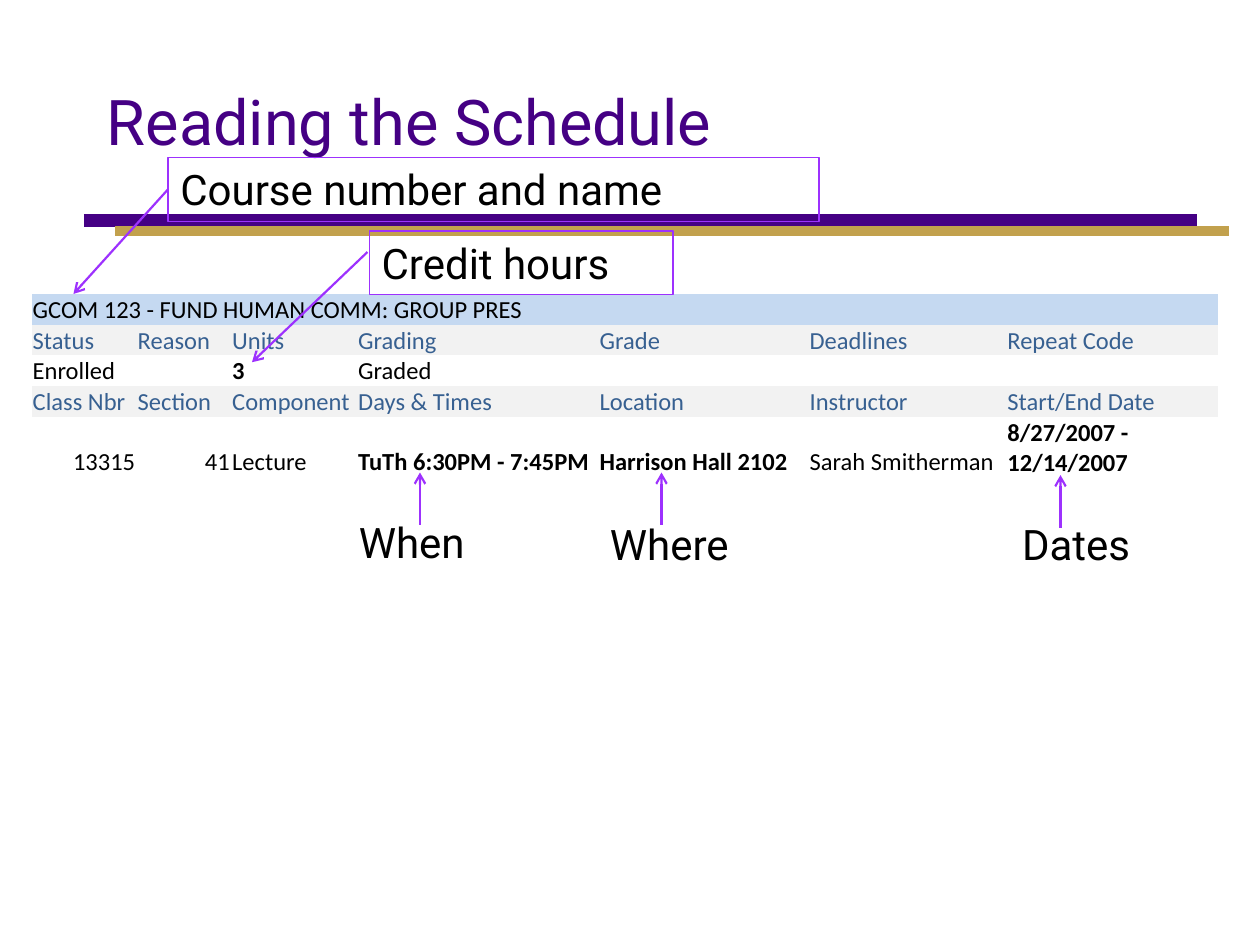
from lxml.etree import SubElement
from pptx import Presentation
from pptx.dml.color import RGBColor
from pptx.enum.shapes import MSO_CONNECTOR as Connector, MSO_SHAPE as Shape
from pptx.enum.text import MSO_ANCHOR as Anchor, MSO_AUTO_SIZE as AutoSize, PP_ALIGN as Align
from pptx.oxml.ns import qn
from pptx.util import Pt

PURPLE, GOLD, VIOLET, BLACK = "450084", "C2A14D", "9D31FE", "000000"
LABEL_BLUE, COURSE_FILL, LABEL_FILL = "376091", "C5D9F1", "F2F2F2"
NO_STYLE = "{2D5ABB26-0587-4C30-8999-92F81FD0307C}"

COLUMN_WIDTHS = [60, 54, 72, 138, 120, 113, 121]
ROW_HEIGHT = 10.8
SCHEDULE = [
    ["GCOM 123 - FUND HUMAN COMM: GROUP PRES"] + [""] * 6,
    ["Status", "Reason", "Units", "Grading", "Grade", "Deadlines", "Repeat Code"],
    ["Enrolled", "", "3", "Graded", "", "", ""],
    ["Class Nbr", "Section", "Component", "Days & Times", "Location", "Instructor", "Start/End Date"],
    ["13315", "41", "Lecture", "TuTh 6:30PM - 7:45PM", "Harrison Hall 2102",
     "Sarah Smitherman", "8/27/2007 - 12/14/2007"],
    [""] * 7,
]
ROW_FILLS = {0: COURSE_FILL, 1: LABEL_FILL, 3: LABEL_FILL}
LABEL_ROWS = {1, 3}
BOLD_CELLS = {(2, 2), (4, 3), (4, 4), (4, 6)}
RIGHT_CELLS = {(4, 0), (4, 1)}


def color(hex_string):
    """Turn a hex string into a colour."""
    return RGBColor.from_string(hex_string)


def apply_format(target, values):
    """Set each attribute of the target from a dict of values."""
    for name, value in values.items():
        setattr(target, name, value)


def write_text(frame, text, font_color, frame_format, font_format):
    """Write one formatted paragraph into a text frame."""
    apply_format(frame, {"word_wrap": True, **frame_format})
    paragraph = frame.paragraphs[0]
    paragraph.alignment = Align.LEFT
    run = paragraph.add_run()
    run.text = text
    apply_format(run.font, font_format)
    run.font.color.rgb = color(font_color)


def add_label(slide, text, left, top, width, height, font_color=BLACK, size=24, **frame_format):
    """Add a plain text box."""
    box = slide.shapes.add_textbox(Pt(left), Pt(top), Pt(width), Pt(height))
    write_text(box.text_frame, text, font_color, frame_format, {"name": "Roboto", "size": Pt(size)})


def add_callout(slide, text, left, top, width, height):
    """Add an outlined rectangle with text and return it."""
    shape = slide.shapes.add_shape(Shape.RECTANGLE, Pt(left), Pt(top), Pt(width), Pt(height))
    shape.shadow.inherit = False
    shape.fill.background()
    shape.line.color.rgb = color(VIOLET)
    shape.line.width = Pt(0.75)
    write_text(shape.text_frame, text, BLACK,
               {"vertical_anchor": Anchor.TOP, "auto_size": AutoSize.SHAPE_TO_FIT_TEXT},
               {"name": "Roboto", "size": Pt(24)})
    return shape


def add_line(slide, start, end, line_color, width):
    """Add a straight connector without a shadow and return it."""
    line = slide.shapes.add_connector(Connector.STRAIGHT, *map(Pt, start + end))
    line.line.color.rgb = color(line_color)
    line.line.width = Pt(width)
    SubElement(line.element.spPr, qn("a:effectLst"))
    return line


def add_arrow(slide, start, end):
    """Add a violet line with an open arrowhead at its end and return it."""
    arrow = add_line(slide, start, end, VIOLET, 1.25)
    SubElement(arrow.element.spPr.find(qn("a:ln")), qn("a:tailEnd"), type="arrow")
    return arrow


def format_cell(cell, text, row, column):
    """Fill one schedule cell and write its text."""
    inset = Pt(0.72)
    apply_format(cell, {"vertical_anchor": Anchor.BOTTOM, "margin_left": inset,
                        "margin_top": inset, "margin_right": inset, "margin_bottom": 0})
    if row in ROW_FILLS:
        cell.fill.solid()
        cell.fill.fore_color.rgb = color(ROW_FILLS[row])
    else:
        cell.fill.background()
    paragraph = cell.text_frame.paragraphs[0]
    paragraph.text = text
    paragraph.alignment = Align.RIGHT if (row, column) in RIGHT_CELLS else Align.LEFT
    apply_format(paragraph.font, {"name": "Calibri", "size": Pt(14 if any(SCHEDULE[row]) else 8),
                                  "bold": (row, column) in BOLD_CELLS})
    paragraph.font.color.rgb = color(LABEL_BLUE if row in LABEL_ROWS else BLACK)
    for run in paragraph.runs:
        apply_format(run.font, {"name": "Calibri", "size": Pt(14), "bold": paragraph.font.bold})
        run.font.color.rgb = paragraph.font.color.rgb


def add_schedule(slide, left, top):
    """Add the schedule table."""
    frame = slide.shapes.add_table(len(SCHEDULE), len(COLUMN_WIDTHS), Pt(left), Pt(top),
                                   Pt(sum(COLUMN_WIDTHS)), Pt(ROW_HEIGHT * len(SCHEDULE)))
    frame.element.xpath(".//a:tableStyleId")[0].text = NO_STYLE
    table = frame.table
    apply_format(table, {"first_row": False, "horz_banding": False})
    for column, width in zip(table.columns, COLUMN_WIDTHS):
        column.width = Pt(width)
    for row in table.rows:
        row.height = Pt(ROW_HEIGHT)
    table.cell(0, 0).merge(table.cell(0, len(COLUMN_WIDTHS) - 1))
    for row, texts in enumerate(SCHEDULE):
        for column, text in enumerate(texts):
            format_cell(table.cell(row, column), text, row, column)


def main():
    """Build the slide and save it."""
    presentation = Presentation()
    apply_format(presentation, {"slide_width": Pt(720), "slide_height": Pt(540)})
    slide = presentation.slides.add_slide(presentation.slide_layouts[6])

    add_line(slide, (48, 126), (684, 126), PURPLE, 8)
    add_line(slide, (66, 132), (702, 132), GOLD, 6)
    add_label(slide, "Reading the Schedule", 54, 24, 630, 90, PURPLE, 36,
              vertical_anchor=Anchor.MIDDLE)
    add_schedule(slide, 18, 168)

    course = add_callout(slide, "Course number and name", 96, 90, 372, 36.5)
    add_arrow(slide, (96, 108), (42, 168)).begin_connect(course, 1)
    add_callout(slide, "Credit hours", 211, 132, 173.5, 36.5)
    add_arrow(slide, (210, 144), (144, 207))

    for text, left, top, arrow_x, arrow_top in [("When", 198, 291.5, 240, 270),
                                                ("Where", 341.5, 292.5, 378, 270),
                                                ("Dates", 577, 292.5, 606, 271.5)]:
        add_label(slide, text, left, top, 114, 36.5, auto_size=AutoSize.SHAPE_TO_FIT_TEXT)
        add_arrow(slide, (arrow_x, arrow_top + 30), (arrow_x, arrow_top))

    presentation.save("out.pptx")


if __name__ == "__main__":
    main()
